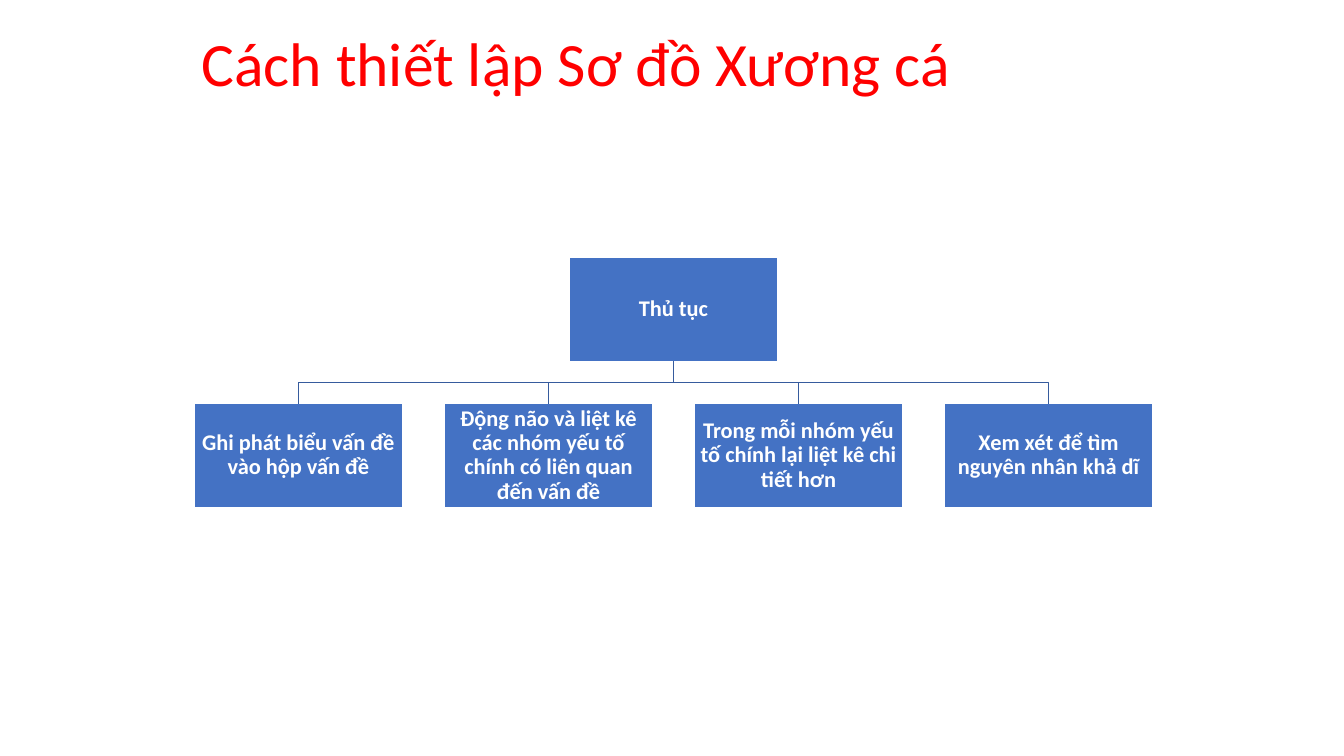
from pptx import Presentation
from pptx import util as u
from pptx.dml.color import RGBColor
from pptx.enum import shapes, text

COLORS = {"title": "FF0000", "box": "4472C4", "branch": "365B9D", "label": "FFFFFF"}
FONT = "Calibri"

# Chart grid, in inches
BOX_W, BOX_H, GAP = 2.05, 1.02, 0.43
CENTER, TOP = 6.68, 2.56

ROOT = "Thủ tục"
STEPS = [
    "Ghi phát biểu vấn đề vào hộp vấn đề",
    "Động não và liệt kê các nhóm yếu tố chính có liên quan đến vấn đề",
    "Trong mỗi nhóm yếu tố chính lại liệt kê chi tiết hơn",
    "Xem xét để tìm nguyên nhân khả dĩ",
]


def color(name):
    return RGBColor.from_string(COLORS[name])


def write(shape, words, size, ink, bold=False, align=text.PP_ALIGN.LEFT, inset=None):
    frame = shape.text_frame
    frame.word_wrap = True
    frame.vertical_anchor = text.MSO_ANCHOR.MIDDLE
    if inset is not None:
        frame.margin_left = frame.margin_right = u.Inches(inset)
        frame.margin_top = frame.margin_bottom = u.Inches(inset)
    line = frame.paragraphs[0]
    line.alignment = align
    line.line_spacing = 0.9
    run = line.add_run()
    run.text = words
    run.font.name = FONT
    run.font.size = u.Pt(size)
    run.font.bold = bold
    run.font.color.rgb = color(ink)


def add_title(slide, words):
    title = slide.shapes.add_textbox(
        u.Inches(1.9), u.Inches(0.25), u.Inches(8.96), u.Inches(0.83))
    write(title, words, size=44, ink="title")


def add_box(slide, center, row, words):
    box = slide.shapes.add_shape(
        shapes.MSO_SHAPE.RECTANGLE, u.Inches(center - BOX_W / 2),
        u.Inches(TOP + row * (BOX_H + GAP)), u.Inches(BOX_W), u.Inches(BOX_H))
    box.shadow.inherit = False
    box.fill.solid()
    box.fill.fore_color.rgb = color("box")
    box.line.fill.background()
    write(box, words, size=16, ink="label", bold=True,
          align=text.PP_ALIGN.CENTER, inset=0.01)


def add_branch(slide, center):
    start = TOP + BOX_H
    bend = start + GAP / 2
    route = [(CENTER, start), (CENTER, bend), (center, bend), (center, start + GAP)]
    points = [(u.Inches(x), u.Inches(y)) for x, y in route]
    builder = slide.shapes.build_freeform(*points[0])
    builder.add_line_segments(points[1:], close=False)
    branch = builder.convert_to_shape()
    branch.shadow.inherit = False
    branch.fill.background()
    branch.line.color.rgb = color("branch")
    branch.line.width = u.Pt(1)


def main():
    deck = Presentation()
    deck.slide_width, deck.slide_height = u.Inches(13.33), u.Inches(7.5)
    slide = deck.slides.add_slide(deck.slide_layouts[6])

    # Step columns, spread evenly around the root
    middle = (len(STEPS) - 1) / 2
    centers = [CENTER + (i - middle) * (BOX_W + GAP) for i in range(len(STEPS))]

    # Branches lie behind the boxes
    for center in reversed(centers):
        add_branch(slide, center)

    # Root and its steps
    add_box(slide, CENTER, 0, ROOT)
    for center, step in zip(centers, STEPS):
        add_box(slide, center, 1, step)

    add_title(slide, "Cách thiết lập Sơ đồ Xương cá")
    deck.save("out.pptx")


if __name__ == "__main__":
    main()
